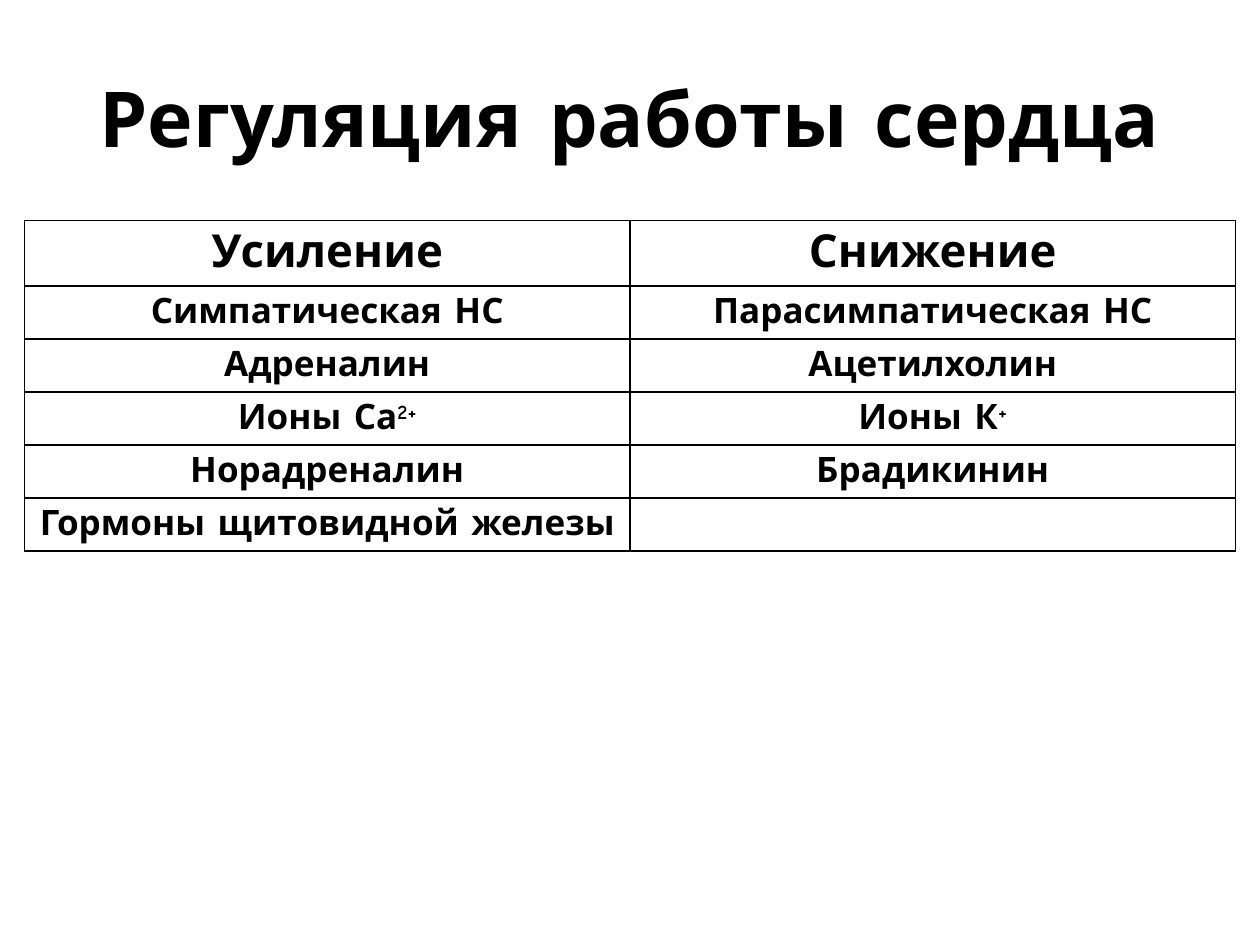
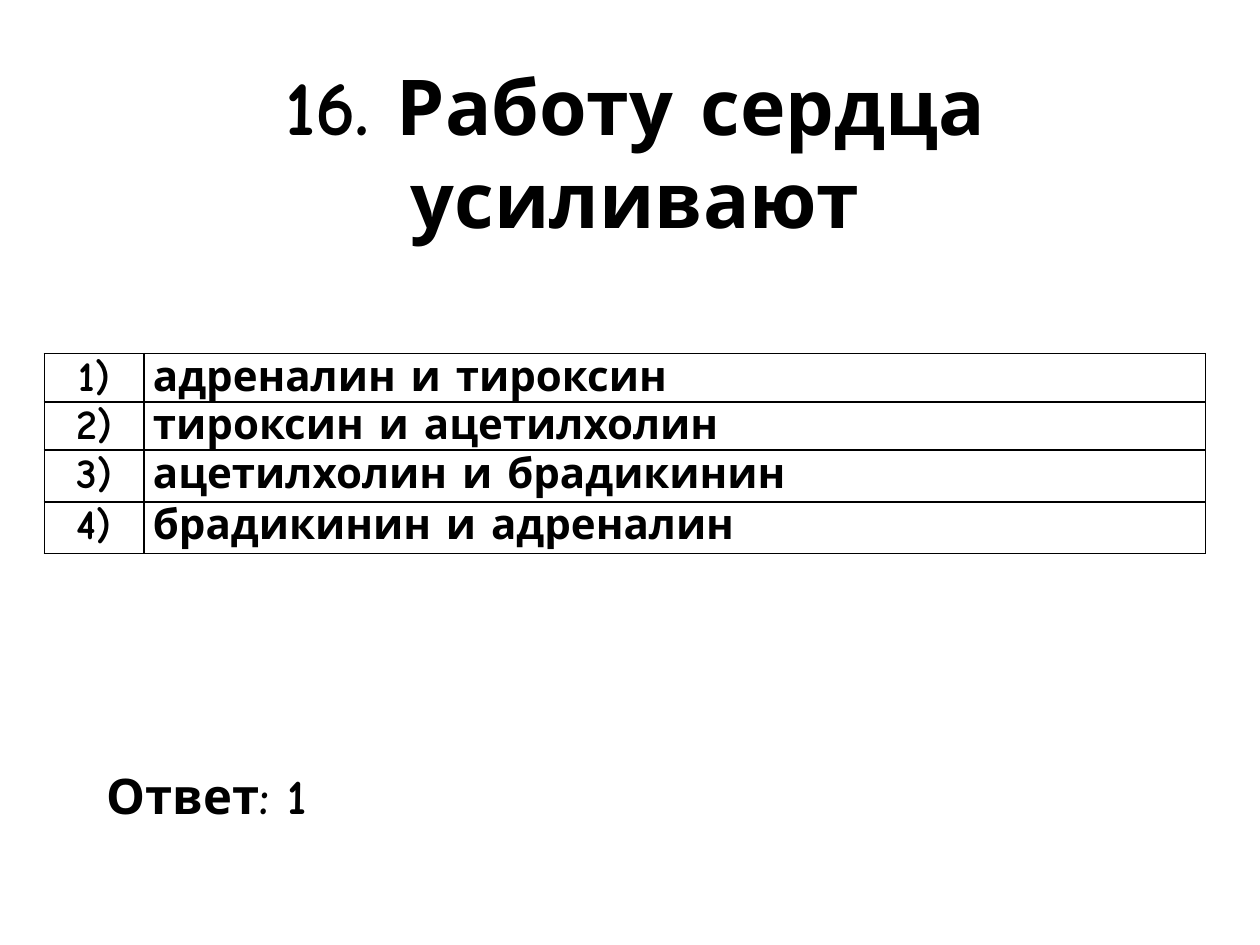
from dataclasses import dataclass

from lxml.etree import SubElement
from pptx import Presentation
from pptx.dml.color import RGBColor
from pptx.enum.text import MSO_ANCHOR, MSO_AUTO_SIZE, PP_ALIGN
from pptx.oxml.ns import qn
from pptx.util import Pt


@dataclass(frozen=True)
class Theme:
    font: str = "Comic Neue"
    ink: RGBColor = RGBColor(0, 0, 0)
    paper: RGBColor = RGBColor(255, 255, 255)
    title: int = 44
    answer: int = 28
    heading: int = 26
    option: int = 24
    body: int = 20
    border: int = 1


THEME = Theme()
TITLE_ONLY = 5


def add_run(p, text, size, superscript=False):
    r = p.add_run()
    r.text = text
    r.font.name = THEME.font
    r.font.size = Pt(size)
    r.font.bold = True
    r.font.color.rgb = THEME.ink
    if superscript:
        r.font._element.set("baseline", "30000")


def add_title_slide(prs, text, box):
    s = prs.slides.add_slide(prs.slide_layouts[TITLE_ONLY])
    s.background.fill.solid()
    s.background.fill.fore_color.rgb = THEME.paper
    title = s.shapes.title
    title.left, title.top, title.width, title.height = map(Pt, box)
    tf = title.text_frame
    tf.word_wrap = True
    tf.auto_size = MSO_AUTO_SIZE.NONE
    tf.vertical_anchor = MSO_ANCHOR.MIDDLE
    p = tf.paragraphs[0]
    p.alignment = PP_ALIGN.CENTER
    add_run(p, text, THEME.title)
    return s


def set_borders(cell):
    tcPr = cell._tc.get_or_add_tcPr()
    for side in ("lnL", "lnR", "lnT", "lnB"):
        ln = SubElement(tcPr, qn(f"a:{side}"), w=str(Pt(THEME.border)))
        fill = SubElement(ln, qn("a:solidFill"))
        SubElement(fill, qn("a:srgbClr"), val=str(THEME.ink))


def add_grid(s, left, top, col_widths, row_heights):
    """Add a plain bordered table and return it."""
    frame = s.shapes.add_table(
        len(row_heights), len(col_widths), Pt(left), Pt(top),
        Pt(sum(col_widths)), Pt(sum(row_heights)))
    table = frame.table
    table.first_row = table.horz_banding = False
    for col, width in zip(table.columns, col_widths):
        col.width = Pt(width)
    for row, height in zip(table.rows, row_heights):
        row.height = Pt(height)
    for cell in table.iter_cells():
        set_borders(cell)
        cell.fill.background()
    return table


def add_regulation_table(s, left, top, width, rows):
    heading_height, row_height = 37.4, 30.3
    heights = [heading_height] + [row_height] * (len(rows) - 1)
    table = add_grid(s, left, top, [width / 2] * 2, heights)
    for i, row in enumerate(rows):
        for j, (text, charge) in enumerate(row):
            cell = table.cell(i, j)
            if i == 0:
                cell.fill.solid()
                cell.fill.fore_color.rgb = THEME.paper
            p = cell.text_frame.paragraphs[0]
            p.alignment = PP_ALIGN.CENTER
            if text:
                add_run(p, text, THEME.body if i else THEME.heading)
            if charge:
                add_run(p, charge, THEME.body, superscript=True)


def add_options_table(s, left, top, width, options):
    number_width = 57
    table = add_grid(s, left, top, [number_width, width - number_width],
                     [27.5, 27.5, 29.5, 29.5])
    styles = ((PP_ALIGN.CENTER, 6.5), (PP_ALIGN.JUSTIFY, 5))
    for i, option in enumerate(options):
        for j, text in enumerate((f"{i + 1})", option)):
            cell = table.cell(i, j)
            align, inset = styles[j]
            cell.margin_left = cell.margin_right = Pt(inset)
            cell.margin_top = cell.margin_bottom = 0
            p = cell.text_frame.paragraphs[0]
            p.alignment = align
            add_run(p, text, THEME.option)


def add_answer(s, text, box):
    tf = s.shapes.add_textbox(*map(Pt, box)).text_frame
    tf.word_wrap = True
    tf.auto_size = MSO_AUTO_SIZE.SHAPE_TO_FIT_TEXT
    p = tf.paragraphs[0]
    p.alignment = PP_ALIGN.JUSTIFY
    add_run(p, text, THEME.answer)


def build_regulation_slide(prs):
    s = add_title_slide(prs, "Регуляция работы сердца", (36, 21.6, 648, 90))
    rows = [
        (("Усиление", ""), ("Снижение", "")),
        (("Симпатическая НС", ""), ("Парасимпатическая НС", "")),
        (("Адреналин", ""), ("Ацетилхолин", "")),
        (("Ионы Са", "2+"), ("Ионы К", "+")),
        (("Норадреналин", ""), ("Брадикинин", "")),
        (("Гормоны щитовидной железы", ""), ("", "")),
    ]
    add_regulation_table(s, 14, 126, 692, rows)


def build_question_slide(prs):
    s = add_title_slide(prs, "16. Работу сердца усиливают",
                        (20, 21.6, 686, 129.6))
    options = ["адреналин и тироксин", "тироксин и ацетилхолин",
               "ацетилхолин и брадикинин", "брадикинин и адреналин"]
    add_options_table(s, 25.4, 202, 663.5, options)
    add_answer(s, "Ответ: 1", (54, 434, 204, 41))


def main():
    prs = Presentation()
    prs.slide_width, prs.slide_height = Pt(720), Pt(540)
    build_regulation_slide(prs)
    build_question_slide(prs)
    prs.save("out.pptx")


if __name__ == "__main__":
    main()
